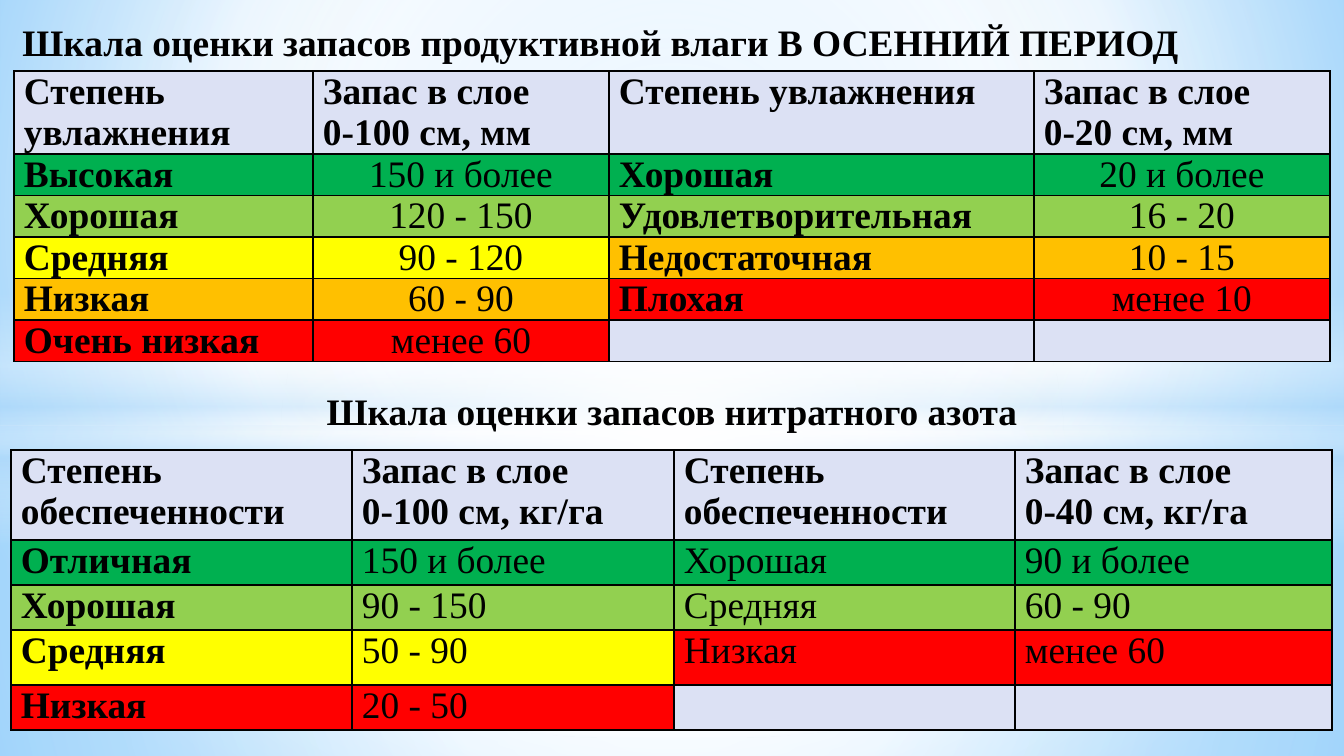
from pptx import Presentation
from pptx.dml.color import RGBColor
from pptx.enum.shapes import MSO_SHAPE as Shape
from pptx.enum.text import MSO_ANCHOR as Anchor, MSO_AUTO_SIZE as AutoSize, PP_ALIGN as Align
from pptx.oxml import parse_xml
from pptx.oxml.ns import nsdecls, qn
from pptx.util import Pt

EMU_PER_PX = 914400 / 134.4
WIDTH, HEIGHT = 1344, 756
TITLE_ONLY = 5

BLACK = RGBColor(0x00, 0x00, 0x00)
WHITE = RGBColor(0xFF, 0xFF, 0xFF)
LAVENDER = RGBColor(0xDC, 0xE1, 0xF4)
GREEN = RGBColor(0x00, 0xB0, 0x50)
LIME = RGBColor(0x92, 0xD0, 0x50)
YELLOW = RGBColor(0xFF, 0xFF, 0x00)
ORANGE = RGBColor(0xFF, 0xC0, 0x00)
RED = RGBColor(0xFF, 0x00, 0x00)
SKY = RGBColor(0x9E, 0xD5, 0xFF)
DEEP_SKY = RGBColor(0x5B, 0xB9, 0xFF)
HAZE = RGBColor(0xB4, 0xDC, 0xFA)

CENTER = (50, 50, 50, 50)
EMPTY = ("", "", LAVENDER)

# Each row holds a left and a right half: label, value, fill.
MOISTURE = [
    (("Степень увлажнения", "Запас в слое\n0-100 см, мм", LAVENDER),
     ("Степень увлажнения", "Запас в слое\n0-20 см, мм", LAVENDER)),
    (("Высокая", "150 и более", GREEN), ("Хорошая", "20 и более", GREEN)),
    (("Хорошая", "120 - 150", LIME), ("Удовлетворительная", "16 - 20", LIME)),
    (("Средняя", "90 - 120", YELLOW), ("Недостаточная", "10 - 15", ORANGE)),
    (("Низкая", "60 - 90", ORANGE), ("Плохая", "менее 10", RED)),
    (("Очень низкая", "менее 60", RED), EMPTY),
]
NITROGEN = [
    (("Степень обеспеченности", "Запас в слое\n0-100 см, кг/га", LAVENDER),
     ("Степень обеспеченности", "Запас в слое\n0-40 см, кг/га", LAVENDER)),
    (("Отличная", "150 и более", GREEN), ("Хорошая", "90 и более", GREEN)),
    (("Хорошая", "90 - 150", LIME), ("Средняя", "60 - 90", LIME)),
    (("Средняя", "50 - 90", YELLOW), ("Низкая", "менее 60", RED)),
    (("Низкая", "20 - 50", RED), EMPTY),
]


def px(length):
    return round(length * EMU_PER_PX)


def apply_gradient(holder, stops, focus=None):
    """Swap the solid fill for a gradient: circular around focus, else top to bottom.

    Stops are (position %, colour, opacity %).
    """
    stop_list = "".join(
        f'<a:gs pos="{pos * 1000}"><a:srgbClr val="{color}">'
        f'<a:alpha val="{opacity * 1000}"/></a:srgbClr></a:gs>'
        for pos, color, opacity in stops)
    direction = '<a:lin ang="5400000" scaled="0"/>'
    if focus:
        sides = " ".join(f'{side}="{value * 1000}"' for side, value in zip("ltrb", focus))
        direction = f'<a:path path="circle"><a:fillToRect {sides}/></a:path>'
    gradient = parse_xml(f'<a:gradFill {nsdecls("a")} rotWithShape="1">'
                         f'<a:gsLst>{stop_list}</a:gsLst>{direction}</a:gradFill>')
    holder.replace(holder.find(qn("a:solidFill")), gradient)


class ScaleSlide:
    font = "Times New Roman"
    size = Pt(20)
    border = Pt(1)
    inset = 10

    def __init__(self, presentation):
        layout = presentation.slide_layouts[TITLE_ONLY]
        self.slide = presentation.slides.add_slide(layout)
        self.shapes = self.slide.shapes

    def background(self, stops, focus):
        self.slide.background.fill.solid()
        apply_gradient(self.slide.element.find(".//" + qn("p:bgPr")), stops, focus)

    def glow(self, kind, top, height, stops, focus=None):
        """Add a borderless gradient as wide as the slide."""
        shape = self.shapes.add_shape(kind, 0, px(top), px(WIDTH), px(height))
        shape.shadow.inherit = False
        shape.line.fill.background()
        shape.fill.solid()
        apply_gradient(shape.element.spPr, stops, focus)

    def set_text(self, frame, text, bold, align):
        frame.text = text
        for paragraph in frame.paragraphs:
            paragraph.alignment = align
            for run in paragraph.runs:
                run.font.name, run.font.size = self.font, self.size
                run.font.bold = bold
                run.font.color.rgb = BLACK

    def title(self, text, left, top, width, height):
        title = self.shapes.title
        title.left, title.top, title.width, title.height = map(px, (left, top, width, height))
        frame = title.text_frame
        frame.auto_size = AutoSize.NONE
        frame.vertical_anchor = Anchor.MIDDLE
        frame.word_wrap = True
        self.set_text(frame, text, True, Align.LEFT)
        title.element.getparent().append(title.element)  # above the glows

    def heading(self, text, left, top, width, height):
        box = self.shapes.add_textbox(*map(px, (left, top, width, height)))
        frame = box.text_frame
        frame.vertical_anchor = Anchor.MIDDLE
        frame.word_wrap = False
        self.set_text(frame, text, True, Align.CENTER)

    def outline(self, cell):
        properties = cell._tc.get_or_add_tcPr()
        for side in "LRTB":
            properties.append(parse_xml(
                f'<a:ln{side} {nsdecls("a")} w="{self.border}"><a:solidFill>'
                f'<a:srgbClr val="{BLACK}"/></a:solidFill></a:ln{side}>'))

    def table(self, rows, left, top, widths, heights, bold_columns, value_align):
        frame = self.shapes.add_table(len(rows), len(widths), px(left), px(top),
                                      px(sum(widths)), px(sum(heights)))
        table = frame.table
        table.first_row = table.horz_banding = False
        for column, width in zip(table.columns, widths):
            column.width = px(width)
        for row, height in zip(table.rows, heights):
            row.height = px(height)
        for r, halves in enumerate(rows):
            for half, (label, value, fill) in enumerate(halves):
                for c, text in enumerate((label, value), start=2 * half):
                    cell = table.cell(r, c)
                    self.outline(cell)
                    cell.fill.solid()
                    cell.fill.fore_color.rgb = fill
                    cell.margin_left = cell.margin_right = px(self.inset)
                    cell.margin_top = cell.margin_bottom = 0
                    is_body_value = r > 0 and c % 2 == 1
                    self.set_text(cell.text_frame, text, r == 0 or c in bold_columns,
                                  value_align if is_body_value else Align.LEFT)


def main():
    presentation = Presentation()
    presentation.slide_width, presentation.slide_height = px(WIDTH), px(HEIGHT)
    page = ScaleSlide(presentation)

    page.background([(0, SKY, 100), (60, WHITE, 100), (100, DEEP_SKY, 100)], (20, 10, 20, 60))
    page.glow(Shape.RECTANGLE, 426, 330,
              [(0, WHITE, 91), (37, WHITE, 76), (100, HAZE, 79)], CENTER)
    page.glow(Shape.RECTANGLE, 0, 426,
              [(0, WHITE, 89), (48, WHITE, 62), (100, HAZE, 79)], CENTER)
    page.glow(Shape.RECTANGLE, 293, 253,
              [(0, WHITE, 0), (29, WHITE, 30), (45, HAZE, 40),
               (55, WHITE, 26), (65, HAZE, 60), (100, WHITE, 0)])
    page.glow(Shape.OVAL, 176, 563, [(0, WHITE, 100), (54, WHITE, 0)], CENTER)

    page.title("Шкала оценки запасов продуктивной влаги В ОСЕННИЙ ПЕРИОД", 9, 12, 1335, 59)
    page.table(MOISTURE, 14, 71, [299, 296, 425, 296], [83] + [41] * 5,
               bold_columns=(0, 2), value_align=Align.CENTER)
    page.heading("Шкала оценки запасов нитратного азота", 310, 381, 724, 59)
    page.table(NITROGEN, 11, 450, [341, 322, 341, 317], [90, 45, 45, 55, 45],
               bold_columns=(0,), value_align=Align.LEFT)
    presentation.save("out.pptx")


if __name__ == "__main__":
    main()
